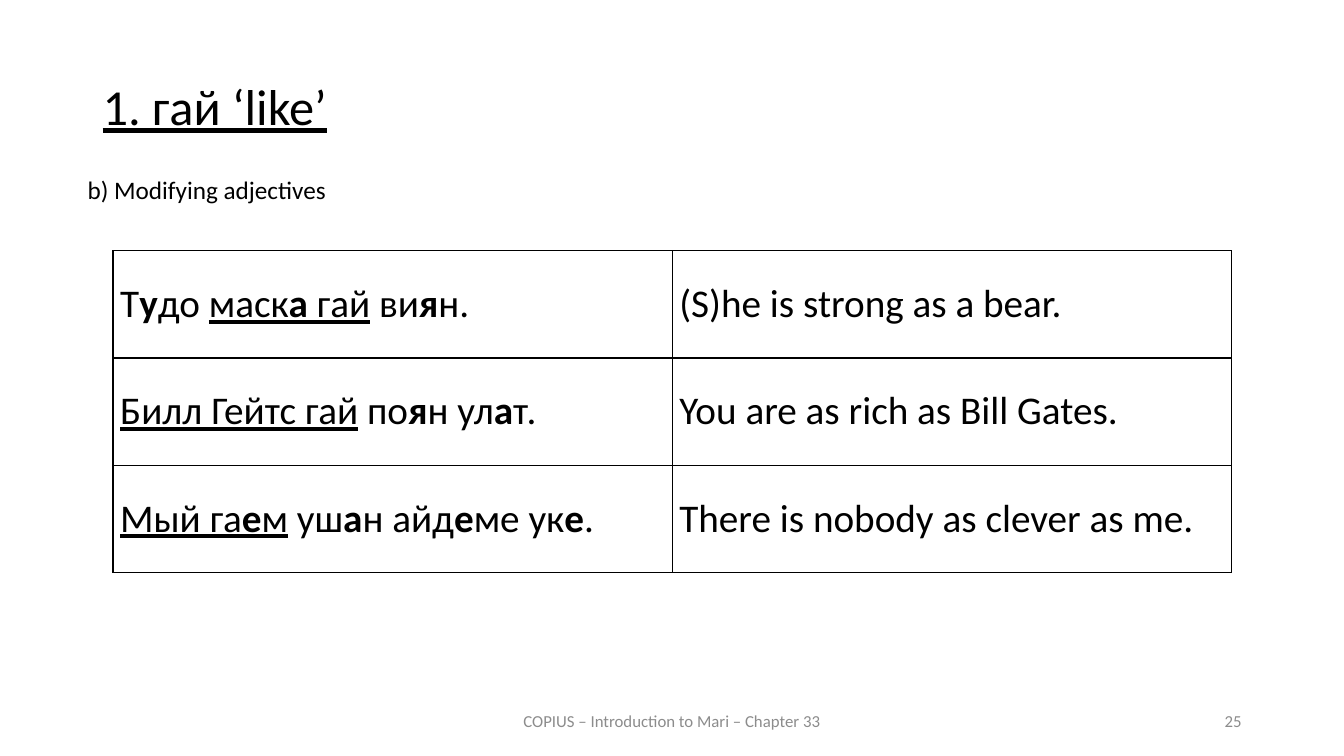
from lxml.etree import SubElement
from pptx import Presentation
from pptx.dml.color import RGBColor
from pptx.enum.text import MSO_ANCHOR as Anchor, PP_ALIGN as Align
from pptx.oxml.ns import qn
from pptx.util import Cm, Pt

FONT = "Calibri"
COLORS = {"text": "000000", "muted": "8C8C8C", "border": "000000"}

# A run is (text, style): b is bold (the stressed vowel), u is underlined.
TITLE = [("1. гай ‘like’", "u")]
SUBTITLE = [("b) Modifying adjectives", "")]
FOOTER = [("COPIUS – Introduction to Mari – Chapter 33", "")]
PAGE_NUMBER = [("25", "")]
EXAMPLES = [
    ([("Т", ""), ("у", "b"), ("до ", ""), ("маск", "u"), ("а", "bu"),
      (" гай", "u"), (" ви", ""), ("я", "b"), ("н.", "")],
     [("(S)he is strong as a bear.", "")]),
    ([("Билл Гейтс гай", "u"), (" по", ""), ("я", "b"), ("н ул", ""),
      ("а", "b"), ("т.", "")],
     [("You are as rich as Bill Gates.", "")]),
    ([("Мый га", "u"), ("е", "bu"), ("м", "u"), (" уш", ""), ("а", "b"),
      ("н айд", ""), ("е", "b"), ("ме ук", ""), ("е", "b"), (".", "")],
     [("There is nobody as clever as me.", "")]),
]

TABLE_LEFT, TABLE_TOP = 2.85, 6.32
COLUMN_WIDTH, ROW_HEIGHT = 14.09, 2.7
FOOTER_TOP, FOOTER_HEIGHT = 17.65, 1.02


def write_runs(text_frame, runs, size, color="text", align=Align.LEFT):
    paragraph = text_frame.paragraphs[0]
    paragraph.alignment = align
    for text, style in runs:
        run = paragraph.add_run()
        run.text = text
        font = run.font
        font.name, font.size = FONT, Pt(size)
        font.bold, font.underline = "b" in style, "u" in style
        font.color.rgb = RGBColor.from_string(COLORS[color])
    return paragraph


def add_text(slide, runs, left, top, width, height, size, color="text",
             align=Align.LEFT, anchor=Anchor.TOP):
    box = slide.shapes.add_textbox(Cm(left), Cm(top), Cm(width), Cm(height))
    box.text_frame.word_wrap = True
    box.text_frame.vertical_anchor = anchor
    write_runs(box.text_frame, runs, size, color, align)


def add_borders(cell):
    properties = cell._tc.get_or_add_tcPr()
    for side in ("lnL", "lnR", "lnT", "lnB"):
        line = SubElement(properties, qn(f"a:{side}"), w=str(Pt(1)))
        fill = SubElement(line, qn("a:solidFill"))
        SubElement(fill, qn("a:srgbClr"), val=COLORS["border"])


def add_title(slide):
    title = slide.shapes.title
    title.left, title.top = Cm(2.33), Cm(1.93)
    title.width, title.height = Cm(29.21), Cm(2.11)
    title.text_frame.vertical_anchor = Anchor.TOP
    paragraph = write_runs(title.text_frame, TITLE, 36)
    paragraph.line_spacing = 0.9


def add_examples(slide):
    rows, columns = len(EXAMPLES), len(EXAMPLES[0])
    table = slide.shapes.add_table(
        rows, columns, Cm(TABLE_LEFT), Cm(TABLE_TOP),
        Cm(COLUMN_WIDTH * columns), Cm(ROW_HEIGHT * rows)).table
    table.first_row = table.horz_banding = False
    for row, sentences in enumerate(EXAMPLES):
        for column, runs in enumerate(sentences):
            cell = table.cell(row, column)
            cell.margin_left = cell.margin_right = Cm(0.18)
            cell.margin_top = cell.margin_bottom = 0
            cell.vertical_anchor = Anchor.MIDDLE
            add_borders(cell)
            cell.fill.background()
            write_runs(cell.text_frame, runs, 28)


def main():
    presentation = Presentation()
    presentation.slide_width, presentation.slide_height = Cm(33.87), Cm(19.05)
    slide = presentation.slides.add_slide(presentation.slide_layouts[5])
    add_title(slide)
    add_text(slide, SUBTITLE, 1.96, 4.27, 13.51, 1.02, 18)
    add_examples(slide)
    add_text(slide, FOOTER, 11.22, FOOTER_TOP, 11.43, FOOTER_HEIGHT, 12,
             "muted", Align.CENTER, Anchor.MIDDLE)
    add_text(slide, PAGE_NUMBER, 23.92, FOOTER_TOP, 7.62, FOOTER_HEIGHT, 12,
             "muted", Align.RIGHT, Anchor.MIDDLE)
    presentation.save("out.pptx")


if __name__ == "__main__":
    main()
